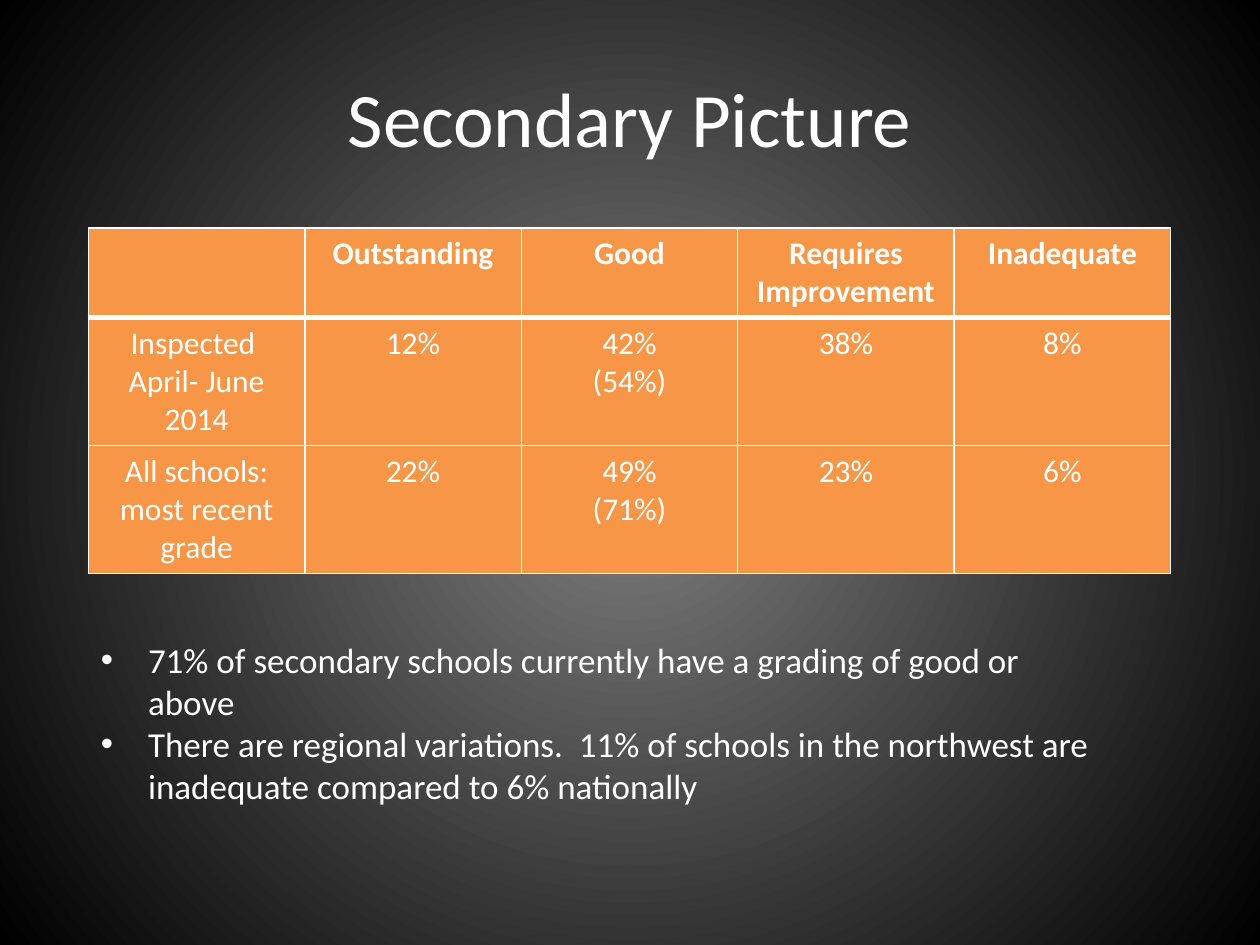
from lxml import etree
from pptx import Presentation
from pptx import util as u
from pptx.dml.color import RGBColor
from pptx.enum import text
from pptx.oxml.ns import qn

COLOURS = {"text": "FFFFFF", "line": "FFFFFF", "cell": "F79646",
           "centre": "7F7F7F", "edge": "000000"}
FONT = "Calibri"

GRADES = [
    ["", "Outstanding", "Good", "Requires Improvement", "Inadequate"],
    ["Inspected \nApril- June 2014", "12%", "42%\n(54%)", "38%", "8%"],
    ["All schools: most recent grade", "22%", "49%\n(71%)", "23%", "6%"],
]
ROW_HEIGHTS = [1.8, 2.58, 2.58]
FINDINGS = [
    "71% of secondary schools currently have a grading of good or above",
    "There are regional variations.  11% of schools in the northwest are "
    "inadequate compared to 6% nationally",
]


def rgb(name):
    return RGBColor.from_string(COLOURS[name])


def style(para, size, align, bold=False):
    para.alignment = align
    para.font.name = FONT
    para.font.size = u.Pt(size)
    para.font.bold = bold
    para.font.color.rgb = rgb("text")


def place(shape, box):
    shape.left, shape.top, shape.width, shape.height = map(u.Cm, box)


def paint_background(page):
    """Fill the page with a gradient that spreads from its centre."""
    fill = page.background.fill
    fill.gradient()
    for stop, name in zip(fill.gradient_stops, ("centre", "edge")):
        stop.color.rgb = rgb(name)
    gradient = page.background._cSld.find(".//" + qn("a:gradFill"))
    gradient.remove(gradient.find(qn("a:lin")))
    spread = etree.SubElement(gradient, qn("a:path"), path="circle")
    etree.SubElement(spread, qn("a:fillToRect"),
                     l="50000", t="50000", r="50000", b="50000")


def add_title(page, box):
    title = page.shapes.title
    place(title, box)
    title.text_frame.text = "Secondary Picture"
    title.text_frame.vertical_anchor = text.MSO_ANCHOR.MIDDLE
    style(title.text_frame.paragraphs[0], 44, text.PP_ALIGN.CENTER)


def add_borders(cell, widths):
    """Draw the borders, given as points by side; call before filling."""
    props = cell._tc.get_or_add_tcPr()
    for side, width in widths.items():
        line = etree.SubElement(props, qn("a:ln" + side), w=str(u.Pt(width)))
        solid = etree.SubElement(line, qn("a:solidFill"))
        etree.SubElement(solid, qn("a:srgbClr"), val=COLOURS["line"])


def add_grades(page, box):
    frame = page.shapes.add_table(len(GRADES), len(GRADES[0]), *map(u.Cm, box))
    table = frame.table
    table.horz_banding = False
    for column in table.columns:
        column.width = u.Cm(box[2] / len(GRADES[0]))
    for r, (values, height) in enumerate(zip(GRADES, ROW_HEIGHTS)):
        table.rows[r].height = u.Cm(height)
        for c, value in enumerate(values):
            cell = table.cell(r, c)
            cell.text = value
            for para in cell.text_frame.paragraphs:
                style(para, 18, text.PP_ALIGN.CENTER, bold=r == 0)
            add_borders(cell, {"L": 1, "R": 1, "T": 3 if r == 1 else 1,
                               "B": 3 if r == 0 else 1})
            cell.fill.solid()
            cell.fill.fore_color.rgb = rgb("cell")


def add_findings(page, box):
    body = page.placeholders[1]
    place(body, box)
    frame = body.text_frame
    frame.text = "\n".join(FINDINGS)
    frame.word_wrap = True
    frame.auto_size = text.MSO_AUTO_SIZE.NONE
    indent = u.Cm(0.95)
    for para in frame.paragraphs:
        style(para, 20, text.PP_ALIGN.LEFT)
        para.space_before = u.Pt(0)
        props = para._p.get_or_add_pPr()
        props.set("marL", str(indent))
        props.set("indent", str(-indent))


def main():
    deck = Presentation()
    deck.slide_width, deck.slide_height = u.Cm(25.4), u.Cm(19.05)
    page = deck.slides.add_slide(deck.slide_layouts[1])
    paint_background(page)
    add_title(page, (1.27, 0.76, 22.86, 3.18))
    add_grades(page, (1.78, 4.6, 21.82, sum(ROW_HEIGHTS)))
    add_findings(page, (1.78, 12.75, 20.83, 3.68))
    deck.save("out.pptx")


if __name__ == "__main__":
    main()
